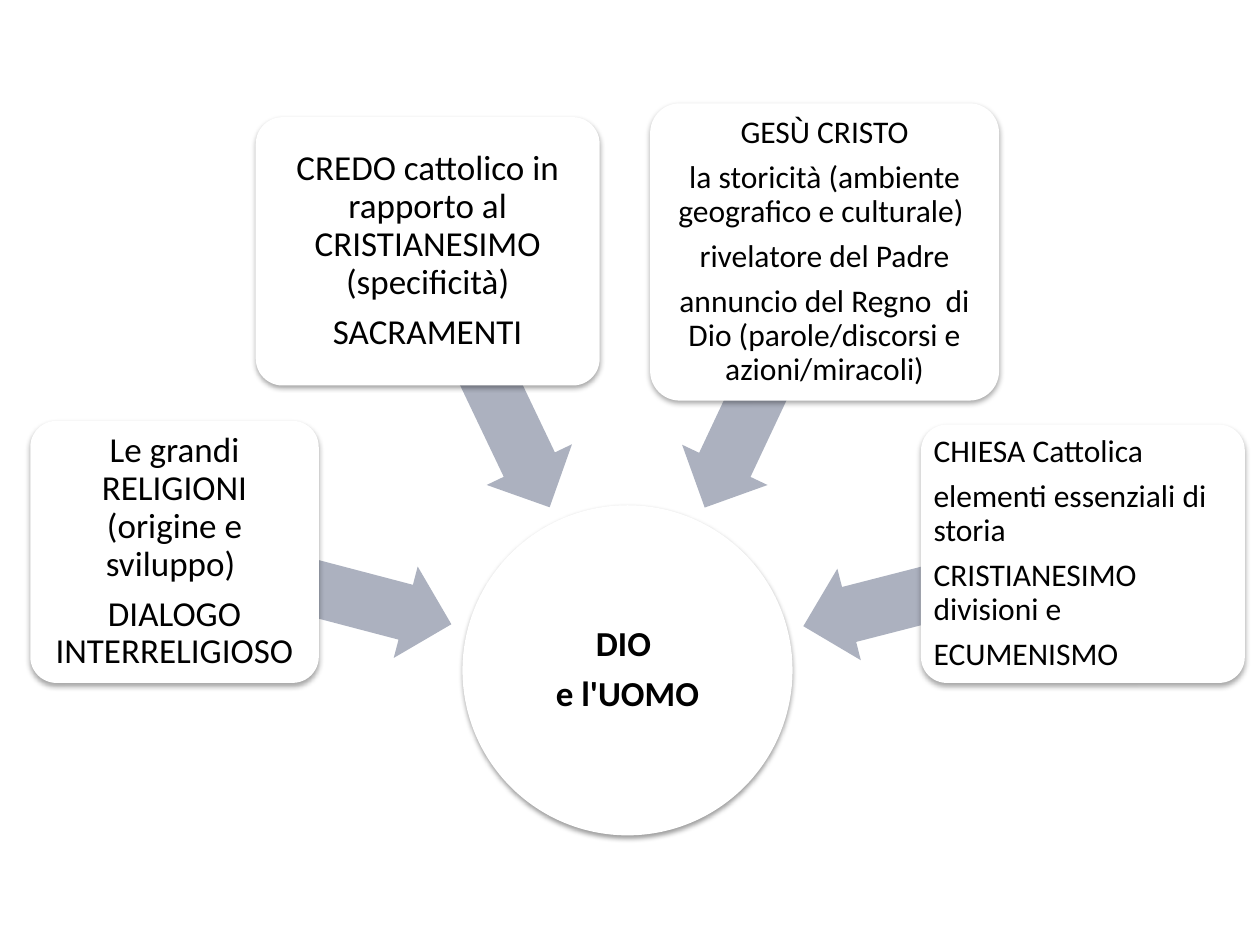
from lxml import etree
from pptx import Presentation
from pptx.dml.color import RGBColor
from pptx.enum.shapes import MSO_SHAPE as Shape
from pptx.enum.text import MSO_ANCHOR as Anchor, PP_ALIGN as Align
from pptx.oxml import parse_xml
from pptx.oxml.ns import nsdecls
from pptx.util import Inches, Pt


def draw(kind, box, color, shade=0):
    """Add a filled shape without outline; shade is the shadow's opacity in percent."""
    shape = slide.shapes.add_shape(kind, *[Inches(n) for n in box])
    shape.fill.solid()
    shape.fill.fore_color.rgb = RGBColor.from_string(color)
    shape.line.fill.background()
    shape.shadow.inherit = False
    if shade:
        effects = shape._element.spPr.find("{*}effectLst")
        effects.append(parse_xml(
            f'<a:outerShdw {nsdecls("a")} blurRad="{Pt(3.1)}" dist="{Pt(1.7)}" '
            'dir="5400000" rotWithShape="0"><a:srgbClr val="000000">'
            f'<a:alpha val="{shade * 1000}"/></a:srgbClr></a:outerShdw>'))
    return shape


def write(shape, lines, size, align, inset, bold=False):
    frame = shape.text_frame
    frame.text = "\n".join(lines)
    frame.word_wrap = True
    frame.vertical_anchor = Anchor.MIDDLE
    frame.margin_left = frame.margin_right = Inches(inset)
    frame.margin_top = frame.margin_bottom = Inches(inset)
    for para in frame.paragraphs:
        para.alignment = align
        para.line_spacing = 0.9
        para.space_after = Pt(round(size * 0.35, 1))
        for run in para.runs:
            font = run.font
            font.name, font.size, font.bold = "Calibri", Pt(size), bold
            font.color.rgb = RGBColor.from_string("000000")


prs = Presentation()
prs.slide_width, prs.slide_height = Inches(10), Inches(7.5)
slide = prs.slides.add_slide(prs.slide_layouts[6])

hub = draw(Shape.OVAL, (3.67, 4.01, 2.62, 2.62), "FFFFFF", 38)
write(hub, ["DIO ", "e l'UOMO"], 20, Align.CENTER, 0.01, True)

# Each topic: arrow left, top, width and turn; card box; text size, alignment, lines
topics = [
    ((1.34, 4.29, 2.28), 194.7, (0.24, 3.34, 2.29, 2.08), 20, Align.CENTER,
     ["Le grandi RELIGIONI (origine e sviluppo) ", "DIALOGO INTERRELIGIOSO"]),
    ((2.76, 2.64, 2.24), 244.5, (2.03, 0.93, 2.73, 2.13), 20, Align.CENTER,
     ["CREDO cattolico in rapporto al CRISTIANESIMO (specificità)", "SACRAMENTI"]),
    ((4.95, 2.64, 2.24), 295.2, (5.16, 0.82, 2.77, 2.36), 18, Align.CENTER,
     ["GESÙ CRISTO", "la storicità (ambiente geografico e culturale) ",
      "rivelatore del Padre",
      "annuncio del Regno  di Dio (parole/discorsi e azioni/miracoli)"]),
    ((6.34, 4.31, 2.29), 345.6, (7.31, 3.37, 2.57, 2.05), 18, Align.LEFT,
     ["CHIESA Cattolica", "elementi essenziali di storia",
      "CRISTIANESIMO divisioni e", "ECUMENISMO"]),
]
for place, turn, box, size, align, lines in topics:
    arrow = draw(Shape.LEFT_ARROW, (*place, 0.75), "ACB1BF")
    arrow.rotation = turn
    arrow.adjustments[0] = 0.6
    arrow.adjustments[1] = 0.5
    card = draw(Shape.ROUNDED_RECTANGLE, box, "FFFFFF", 35)
    card.adjustments[0] = 0.1
    write(card, lines, size, align, 0.04)

prs.save("out.pptx")
